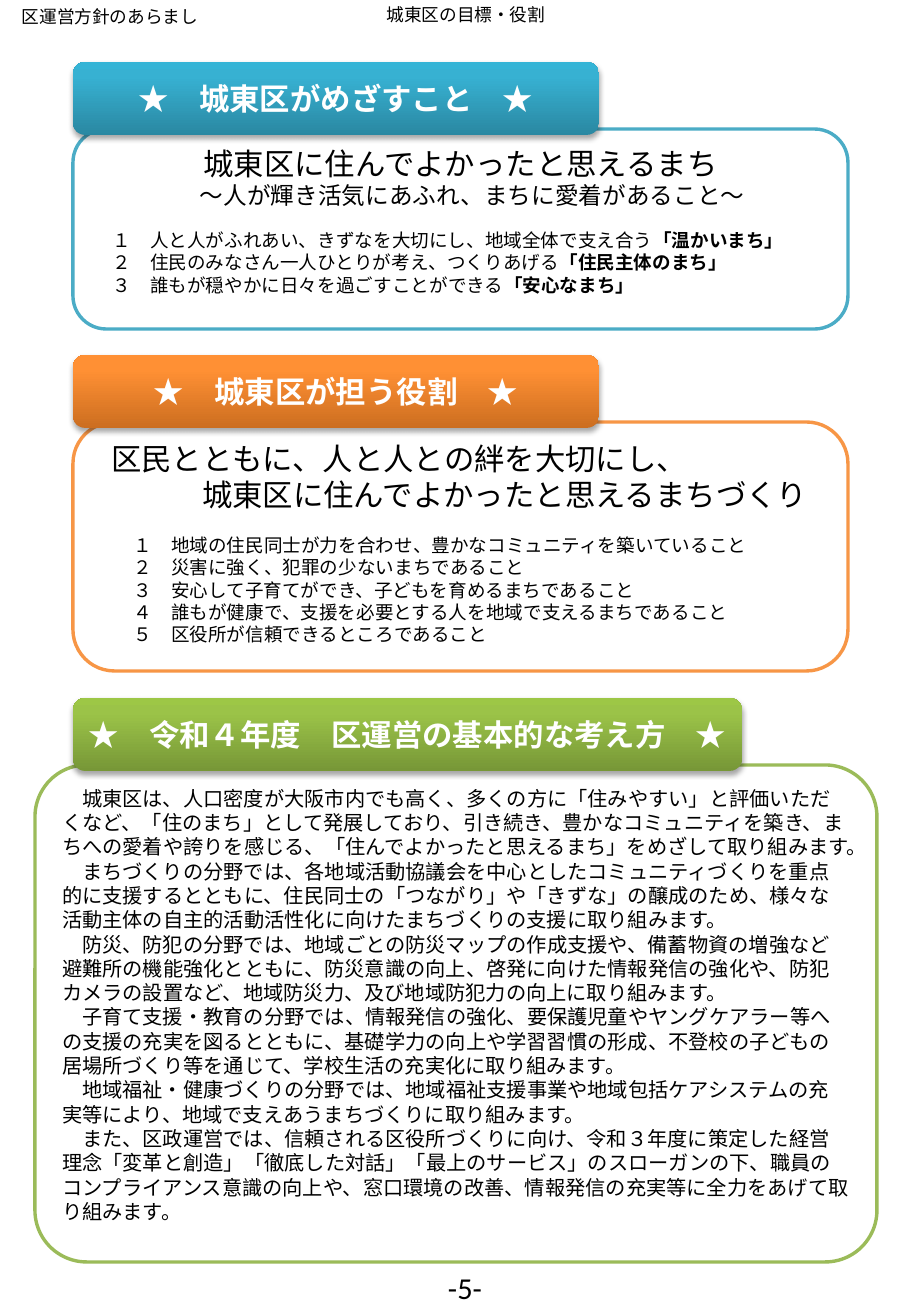
"""Builds the one-page outline of the ward's goals, roles and basic policy."""
from copy import deepcopy
from dataclasses import dataclass

from lxml.etree import SubElement
from pptx import Presentation
from pptx.dml.color import RGBColor
from pptx.enum.shapes import MSO_SHAPE
from pptx.enum.text import MSO_ANCHOR, MSO_AUTO_SIZE, PP_ALIGN
from pptx.oxml.ns import qn
from pptx.util import Pt


@dataclass(frozen=True)
class Theme:
    """Colours, fonts and type sizes."""
    black: str = "000000"
    white: str = "FFFFFF"
    blue: tuple = ("4BACC6", "2A88A2", "37B1D2", "34B4D6")
    orange: tuple = ("F79646", "CC6E20", "FF9034", "FF9136")
    green: tuple = ("9BBB59", "779737", "9BC348", "9DC746")
    stops: tuple = (0, 0.8, 1)
    main: str = "Noto Sans CJK JP"
    header: str = "Arial"
    number: str = "Calibri"
    head: float = 18
    sub: float = 14
    body: float = 12
    item: float = 11
    small: float = 10.5
    leading: float = 1.2


class Page:
    """Holds the theme and the current slide, and draws each kind of element."""

    def __init__(self, s, theme):
        self.s, self.theme = s, theme

    @staticmethod
    def px(n):
        """Turn pixels into EMU."""
        return n * 7526

    def place(self, sp, box):
        """Move a shape to a pixel box."""
        for name, n in zip(("left", "top", "width", "height"), box):
            setattr(sp, name, self.px(n))

    def frame(self, sp, anchor=MSO_ANCHOR.MIDDLE, margin=0):
        """Format the text frame of a shape."""
        fmt = {"word_wrap": True, "auto_size": MSO_AUTO_SIZE.NONE, "vertical_anchor": anchor,
               "margin_left": self.px(margin * 2), "margin_right": self.px(margin * 2),
               "margin_top": self.px(margin), "margin_bottom": self.px(margin)}
        for name, value in fmt.items():
            setattr(sp.text_frame, name, value)
        return sp.text_frame

    def put_text(self, tf, lines, size, align=PP_ALIGN.CENTER, font=None, color=None, bold=False):
        """Set lines of (text, bold tail, left margin, first-line indent, size)."""
        font = font or self.theme.main
        for i, (text, tail, left, indent, own) in enumerate(lines):
            p = tf.paragraphs[0] if i == 0 else tf.add_paragraph()
            points = own or size
            fmt = {"alignment": align, "space_before": Pt(0), "space_after": Pt(0),
                   "line_spacing": Pt(round(points * self.theme.leading, 1))}
            for name, value in fmt.items():
                setattr(p, name, value)
            pPr = p._p.get_or_add_pPr()
            pPr.set("marL", str(self.px(left)))
            pPr.set("indent", str(self.px(indent)))
            SubElement(pPr, qn("a:buNone"))
            for part, heavy in ((text, bold), (tail, True)):
                if part:
                    r = p.add_run()
                    r.text = part
                    for name, value in {"size": Pt(points), "name": font, "bold": heavy}.items():
                        setattr(r.font, name, value)
                    r.font.color.rgb = RGBColor.from_string(color or self.theme.black)
                    SubElement(r._r.get_or_add_rPr(), qn("a:ea"), typeface=font)

    def label(self, text, box, size, font):
        """Add a centred text box."""
        sp = self.s.shapes.add_textbox(*map(self.px, box))
        self.put_text(self.frame(sp), [line(text)], size, font=font)

    def title(self, text, box):
        """Fill the title placeholder."""
        sp = self.s.shapes.title
        self.place(sp, box)
        self.put_text(self.frame(sp), [line(text)], self.theme.small, font=self.theme.header)

    def items(self, idx, lines, box):
        """Fill a body placeholder with a numbered list, in front of its panel."""
        sp = self.s.placeholders[idx]
        self.place(sp, box)
        self.s.shapes._spTree.append(sp._element)
        self.put_text(self.frame(sp, MSO_ANCHOR.TOP), lines, self.theme.item, PP_ALIGN.LEFT)

    def round_box(self, box):
        """Add a rounded rectangle without the default shadow."""
        sp = self.s.shapes.add_shape(MSO_SHAPE.ROUNDED_RECTANGLE, *map(self.px, box))
        sp.shadow.inherit = False
        return sp

    def panel(self, box, color, lines, size, align, adj=0.1667):
        """Add an outlined panel with text at its top."""
        sp = self.round_box(box)
        sp.adjustments[0] = adj
        sp.fill.solid()
        sp.fill.fore_color.rgb = RGBColor.from_string(self.theme.white)
        sp.line.color.rgb = RGBColor.from_string(color)
        sp.line.width = Pt(2)
        self.put_text(self.frame(sp, MSO_ANCHOR.TOP, 6), lines, size, align)

    def banner(self, text, box, colors):
        """Add a shaded heading with a soft shadow."""
        sp = self.round_box(box)
        sp.line.fill.background()
        sp.fill.gradient()
        sp.fill.gradient_angle = 90
        spPr = sp._element.spPr
        gsLst = spPr.find(".//" + qn("a:gsLst"))
        gsLst.append(deepcopy(gsLst[-1]))
        for stop, pos, color in zip(sp.fill.gradient_stops, self.theme.stops, colors[1:]):
            stop.position = pos
            stop.color.rgb = RGBColor.from_string(color)
        shadow = SubElement(spPr.find(qn("a:effectLst")), qn("a:outerShdw"), blurRad=str(Pt(3.1)),
                            dist=str(Pt(1.8)), dir="5400000", rotWithShape="0")
        clr = SubElement(shadow, qn("a:srgbClr"), val=self.theme.black)
        SubElement(clr, qn("a:alpha"), val="35000")
        self.put_text(self.frame(sp), [line(text)], self.theme.head, color=self.theme.white, bold=True)

    def section(self, heading, width, box, colors, *panel):
        """Add a panel and the banner that overlaps its top edge."""
        self.panel(box, colors[0], *panel)
        self.banner(heading, (73, box[1] - 67, width, 73), colors)


def line(text, tail="", left=0, indent=0, size=None):
    """Describe one line of text."""
    return text, tail, left, indent, size


GOALS = [
    line("１　人と人がふれあい、きずなを大切にし、地域全体で支え合う", "「温かいまち」"),
    line("２　住民のみなさん一人ひとりが考え、つくりあげる", "「住民主体のまち」"),
    line("３　誰もが穏やかに日々を過ごすことができる", "「安心なまち」"),
]
ROLES = [
    "１　地域の住民同士が力を合わせ、豊かなコミュニティを築いていること",
    "２　災害に強く、犯罪の少ないまちであること",
    "３　安心して子育てができ、子どもを育めるまちであること",
    "４　誰もが健康で、支援を必要とする人を地域で支えるまちであること",
    "５　区役所が信頼できるところであること",
]
POLICY = [
    "城東区は、人口密度が大阪市内でも高く、多くの方に「住みやすい」と評価いただくなど、「住のまち」として発展しており、引き続き、豊かなコミュニティを築き、まちへの愛着や誇りを感じる、「住んでよかったと思えるまち」をめざして取り組みます。",
    "まちづくりの分野では、各地域活動協議会を中心としたコミュニティづくりを重点的に支援するとともに、住民同士の「つながり」や「きずな」の醸成のため、様々な活動主体の自主的活動活性化に向けたまちづくりの支援に取り組みます。",
    "防災、防犯の分野では、地域ごとの防災マップの作成支援や、備蓄物資の増強など避難所の機能強化とともに、防災意識の向上、啓発に向けた情報発信の強化や、防犯カメラの設置など、地域防災力、及び地域防犯力の向上に取り組みます。",
    "子育て支援・教育の分野では、情報発信の強化、要保護児童やヤングケアラー等への支援の充実を図るとともに、基礎学力の向上や学習習慣の形成、不登校の子どもの居場所づくり等を通じて、学校生活の充実化に取り組みます。",
    "地域福祉・健康づくりの分野では、地域福祉支援事業や地域包括ケアシステムの充実等により、地域で支えあうまちづくりに取り組みます。",
    "また、区政運営では、信頼される区役所づくりに向け、令和３年度に策定した経営理念「変革と創造」「徹底した対話」「最上のサービス」のスローガンの下、職員のコンプライアンス意識の向上や、窓口環境の改善、情報発信の充実等に全力をあげて取り組みます。",
]


def main():
    """Build and save the page."""
    theme = Theme()
    prs = Presentation()
    prs.slide_width, prs.slide_height = Page.px(911), Page.px(1316)
    page = Page(prs.slides.add_slide(prs.slide_layouts[3]), theme)
    page.title("城東区の目標・役割", (303, -2, 326, 32))
    page.label("区運営方針のあらまし", (0, 0, 220, 32), theme.small, theme.header)
    page.section("★　城東区がめざすこと　★", 526, (73, 129, 775, 200), theme.blue,
                 [line("城東区に住んでよかったと思えるまち"),
                  line("～人が輝き活気にあふれ、まちに愛着があること～", left=24, size=theme.sub)],
                 theme.head, PP_ALIGN.CENTER)
    page.items(1, GOALS, (113, 229, 715, 72))
    page.section("★　城東区が担う役割　★", 526, (73, 422, 775, 249), theme.orange,
                 [line("区民とともに、人と人との絆を大切にし、", left=14),
                  line("城東区に住んでよかったと思えるまちづくり", left=105)],
                 theme.head, PP_ALIGN.LEFT)
    page.items(2, map(line, ROLES), (134, 534, 694, 116))
    page.section("★　令和４年度　区運営の基本的な考え方　★", 669, (35, 765, 842, 497), theme.green,
                 [line(text, indent=20) for text in POLICY], theme.body, PP_ALIGN.LEFT, 0.104)
    page.label("-5-", (408, 1271, 114, 32), theme.head, theme.number)
    prs.save("out.pptx")


if __name__ == "__main__":
    main()
